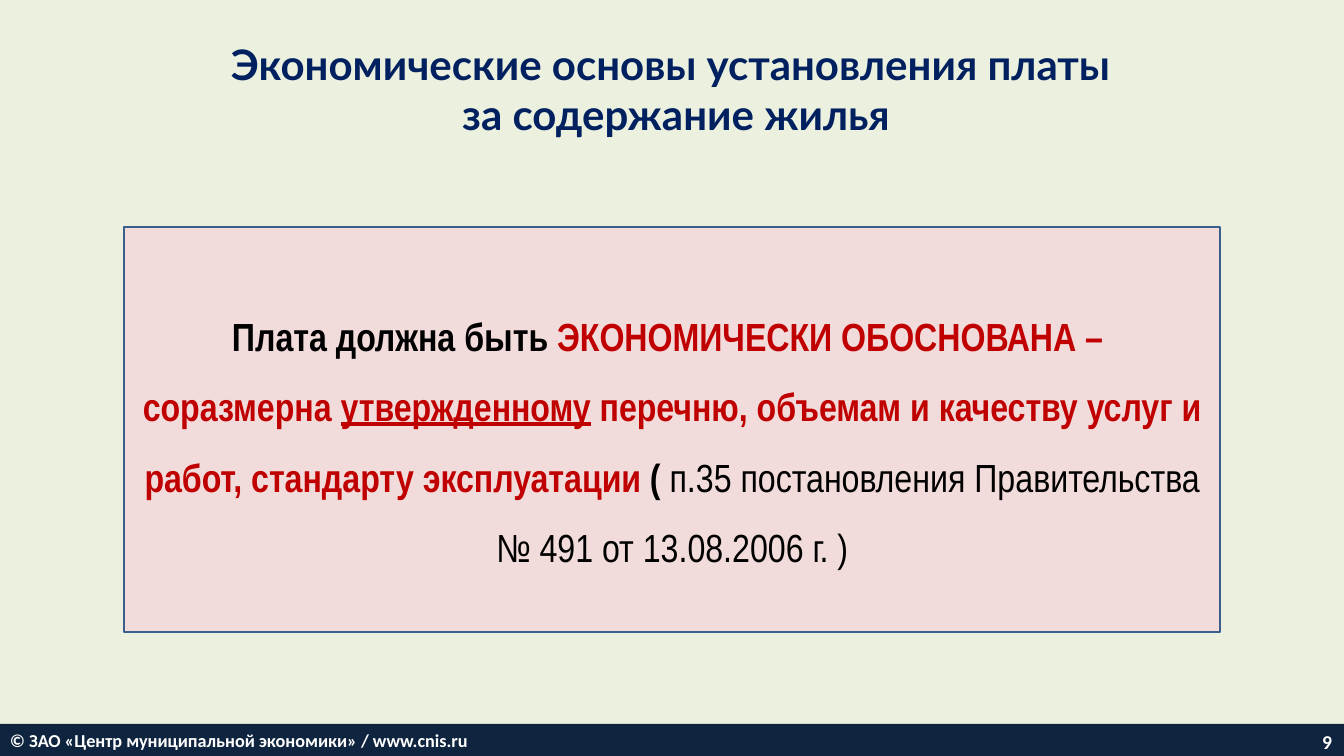
"""Build the slide on the economic basis of housing maintenance charges."""
from dataclasses import dataclass
from typing import Optional

from pptx import Presentation
from pptx.dml.color import RGBColor
from pptx.enum.shapes import MSO_SHAPE
from pptx.enum.text import MSO_ANCHOR, MSO_AUTO_SIZE, PP_ALIGN
from pptx.shapes.autoshape import Shape
from pptx.util import Emu, Pt

EMU_PER_PX = 914400 / 100.8


def px(length: int) -> Emu:
    return Emu(round(length * EMU_PER_PX))


@dataclass(frozen=True)
class Theme:
    background: str = "EBF1DE"
    heading: str = "002060"
    panel: str = "F2DCDB"
    border: str = "3A5F8C"
    footer: str = "0F243E"
    text: str = "000000"
    accent: str = "C00000"
    light: str = "FFFFFF"
    heading_size: int = 30
    statement_size: int = 28
    footer_size: int = 13
    number_size: int = 14


THEME = Theme()


@dataclass(frozen=True)
class Area:
    left: int
    top: int
    width: int
    height: int

    def emu(self) -> tuple[Emu, Emu, Emu, Emu]:
        return px(self.left), px(self.top), px(self.width), px(self.height)


@dataclass(frozen=True)
class Phrase:
    text: str
    color: str
    bold: bool = True
    underline: bool = False


@dataclass(frozen=True)
class Copy:
    phrases: tuple[Phrase, ...]
    font: str
    size: int
    align: PP_ALIGN
    anchor: MSO_ANCHOR = MSO_ANCHOR.TOP
    line_spacing: float = 1.0
    space_after: int = 0


@dataclass(frozen=True)
class Panel:
    area: Area
    fill: str
    copy: Copy
    border: Optional[str] = None


HEADING_AREA = Area(172, 33, 1008, 112)
HEADING = Copy(
    (Phrase("Экономические основы установления платы \nза содержание жилья", THEME.heading),),
    "Lato", THEME.heading_size, PP_ALIGN.CENTER,
)
STATEMENT = Copy(
    (
        Phrase("Плата должна быть ", THEME.text),
        Phrase("ЭКОНОМИЧЕСКИ ОБОСНОВАНА – \nсоразмерна ", THEME.accent),
        Phrase("утвержденному", THEME.accent, underline=True),
        Phrase(" перечню, объемам и качеству услуг и работ, стандарту эксплуатации ", THEME.accent),
        Phrase("( ", THEME.text),
        Phrase("п.35 постановления Правительства № 491 от 13.08.2006 г. )", THEME.text, bold=False),
    ),
    "Arial Narrow", THEME.statement_size, PP_ALIGN.CENTER, MSO_ANCHOR.MIDDLE, 1.5, 7,
)
COPYRIGHT = Copy(
    (Phrase("© ЗАО «Центр муниципальной экономики» / www.cnis.ru", THEME.light),),
    "Calibri", THEME.footer_size, PP_ALIGN.LEFT,
)
PANELS = (
    Panel(Area(124, 227, 1096, 405), THEME.panel, STATEMENT, THEME.border),
    Panel(Area(0, 724, 1344, 32), THEME.footer, COPYRIGHT),
)
NUMBER_AREA = Area(1107, 727, 235, 30)
NUMBER = Copy(
    (Phrase("9", THEME.light),),
    "Calibri", THEME.number_size, PP_ALIGN.RIGHT, MSO_ANCHOR.MIDDLE,
)


def write(shape: Shape, copy: Copy) -> None:
    frame = shape.text_frame
    frame.word_wrap = True
    frame.auto_size = MSO_AUTO_SIZE.NONE
    frame.vertical_anchor = copy.anchor
    paragraph = frame.paragraphs[0]
    paragraph.alignment = copy.align
    paragraph.line_spacing = copy.line_spacing
    paragraph.space_before = Pt(0)
    paragraph.space_after = Pt(copy.space_after)
    for phrase in copy.phrases:
        for index, line in enumerate(phrase.text.split("\n")):
            if index:
                paragraph.add_line_break()
            run = paragraph.add_run()
            run.text = line
            run.font.name = copy.font
            run.font.size = Pt(copy.size)
            run.font.bold = phrase.bold
            run.font.underline = phrase.underline
            run.font.color.rgb = RGBColor.from_string(phrase.color)


def main() -> None:
    deck = Presentation()
    deck.slide_width, deck.slide_height = px(1344), px(756)
    slide = deck.slides.add_slide(deck.slide_layouts[5])
    slide.background.fill.solid()
    slide.background.fill.fore_color.rgb = RGBColor.from_string(THEME.background)

    heading = slide.shapes.title
    heading.left, heading.top, heading.width, heading.height = HEADING_AREA.emu()
    write(heading, HEADING)

    for panel in PANELS:
        block = slide.shapes.add_shape(MSO_SHAPE.RECTANGLE, *panel.area.emu())
        block.shadow.inherit = False
        block.fill.solid()
        block.fill.fore_color.rgb = RGBColor.from_string(panel.fill)
        if panel.border:
            block.line.color.rgb = RGBColor.from_string(panel.border)
            block.line.width = Pt(2)
        else:
            block.line.fill.background()
        write(block, panel.copy)

    write(slide.shapes.add_textbox(*NUMBER_AREA.emu()), NUMBER)
    deck.save("out.pptx")


if __name__ == "__main__":
    main()
